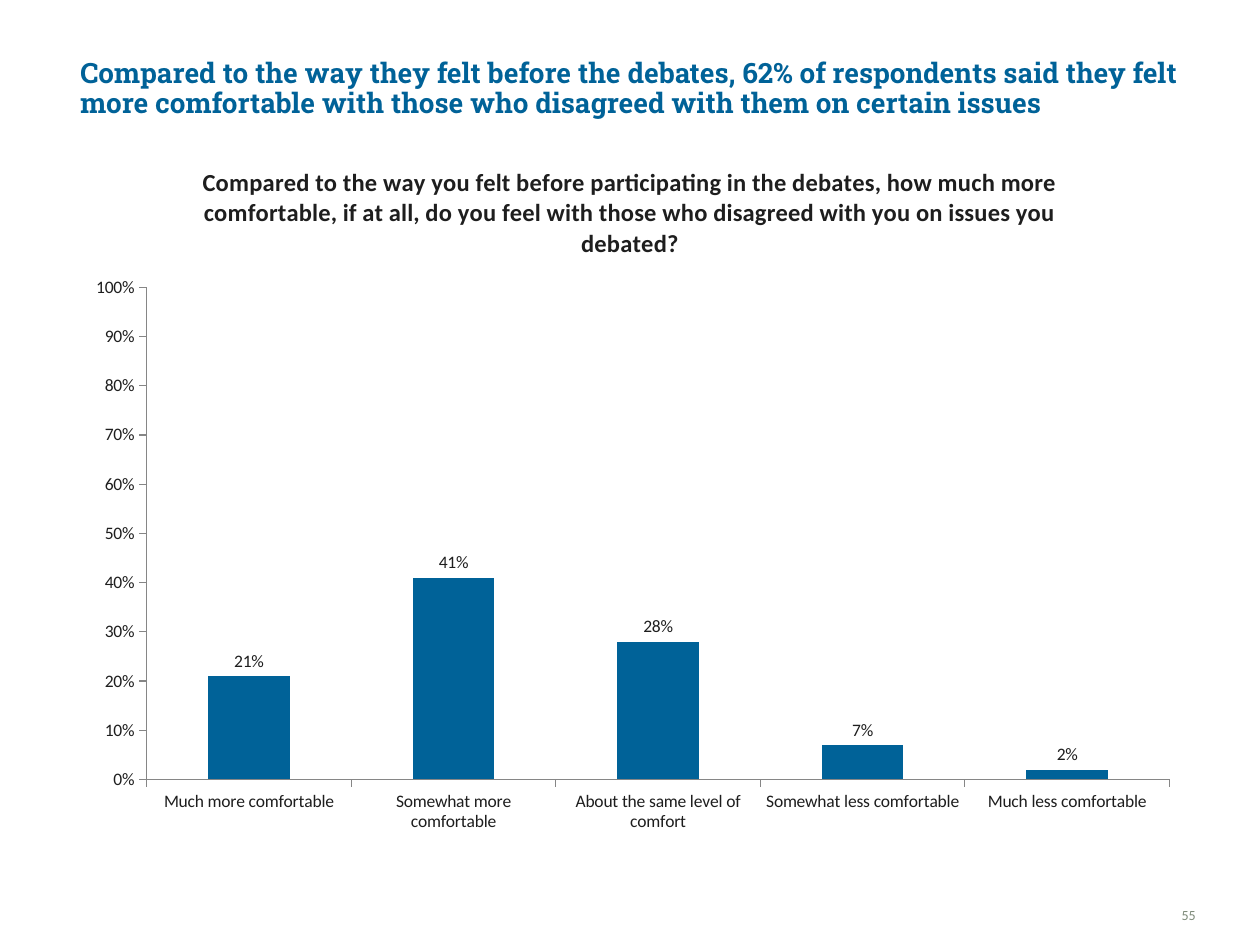
from pptx import Presentation
from pptx.chart.data import CategoryChartData as Data
from pptx.dml.color import RGBColor as Color
from pptx.enum.chart import XL_CHART_TYPE as Kind, XL_LABEL_POSITION as Spot, XL_TICK_MARK as Tick
from pptx.enum.text import MSO_ANCHOR as Anchor, PP_ALIGN as Align
from pptx.oxml import parse_xml
from pptx.oxml.ns import nsdecls, qn
from pptx.util import Inches, Pt


def paint(code):
    return Color.from_string(code)


def write(para, text, size=10, face="Calibri", color="1E1E1E", bold=False, align=None):
    run = para.add_run()
    run.text = text
    font = run.font
    font.size, font.name, font.bold = Pt(size), face, bold
    font.color.rgb = paint(color)
    para.alignment = align


class Deck:
    """Holds the style and the current slide."""

    blue, ink, gray, line = "006298", "1E1E1E", "7E8B7A", "868686"

    def __init__(self, wide, high):
        self.show = Presentation()
        self.show.slide_width, self.show.slide_height = Inches(wide), Inches(high)
        self.slide = self.show.slides.add_slide(self.show.slide_layouts[6])

    def text(self, box, words, anchor, inset=(0, 0), spacing=None, **style):
        frame = self.slide.shapes.add_textbox(*map(Inches, box)).text_frame
        frame.word_wrap = True
        frame.vertical_anchor = anchor
        frame.margin_left = frame.margin_right = Inches(inset[0])
        frame.margin_top = frame.margin_bottom = Inches(inset[1])
        para = frame.paragraphs[0]
        para.line_spacing = spacing
        write(para, words, **style)

    def chart(self, box, title, rows, plot):
        data = Data(number_format="0%")
        data.categories = [name for name, _ in rows]
        data.add_series("Series 1", [value for _, value in rows])
        chart = self.slide.shapes.add_chart(
            Kind.COLUMN_CLUSTERED, *map(Inches, box), data).chart
        chart.font.size, chart.font.name = Pt(10), "Calibri"
        chart.font.color.rgb = paint(self.ink)
        chart.has_legend = False
        chart.has_title = True
        write(chart.chart_title.text_frame.paragraphs[0], title, size=14, bold=True)
        chart.chart_title.include_in_layout = False
        self.axes(chart)
        self.bars(chart.plots[0])
        self.place(chart, plot)

    def axes(self, chart):
        for axis in (chart.category_axis, chart.value_axis):
            axis.has_major_gridlines = False
            axis.major_tick_mark = Tick.OUTSIDE
            axis.format.line.color.rgb = paint(self.line)
            axis.format.line.width = Pt(0.75)
        scale = chart.value_axis
        scale.minimum_scale, scale.maximum_scale, scale.major_unit = 0, 1, 0.1
        scale.tick_labels.number_format = "0%"
        scale.tick_labels.number_format_is_linked = False

    def bars(self, plot):
        plot.gap_width = 150
        plot.vary_by_categories = False
        fill = plot.series[0].format.fill
        fill.solid()
        fill.fore_color.rgb = paint(self.blue)
        plot.has_data_labels = True
        labels = plot.data_labels
        labels.show_value = True
        labels.number_format, labels.number_format_is_linked = "0%", False
        labels.position = Spot.OUTSIDE_END

    def place(self, chart, plot):
        area = chart.plots[0]._element.getparent()
        for old in area.findall(qn("c:layout")):
            area.remove(old)
        sizes = "".join(f'<c:{key} val="{val}"/>' for key, val in zip("xywh", plot))
        area.insert(0, parse_xml(
            f'<c:layout {nsdecls("c")}><c:manualLayout><c:layoutTarget val="inner"/>'
            f'<c:xMode val="edge"/><c:yMode val="edge"/>{sizes}'
            '</c:manualLayout></c:layout>'))


def main():
    deck = Deck(10, 7.5)
    deck.text(
        (0.54, 0.36, 9.46, 0.7),
        "Compared to the way they felt before the debates, 62% of respondents said they felt "
        "more comfortable with those who disagreed with them on certain issues",
        Anchor.MIDDLE, inset=(0.1, 0.05), spacing=0.9,
        size=16, face="Roboto Slab", color=deck.blue, bold=True)
    deck.chart(
        (0.54, 1.11, 8.92, 5.58),
        "Compared to the way you felt before participating in the debates, how much more "
        "comfortable, if at all, do you feel with those who disagreed with you on issues "
        "you debated?",
        [("Much more comfortable", 0.21), ("Somewhat more comfortable", 0.41),
         ("About the same level of comfort", 0.28), ("Somewhat less comfortable", 0.07),
         ("Much less comfortable", 0.02)],
        (0.07, 0.21, 0.91, 0.7))
    deck.text((8.97, 7.07, 0.52, 0.26), "55", Anchor.BOTTOM,
              size=8, color=deck.gray, align=Align.RIGHT)
    deck.show.save("out.pptx")


if __name__ == "__main__":
    main()
